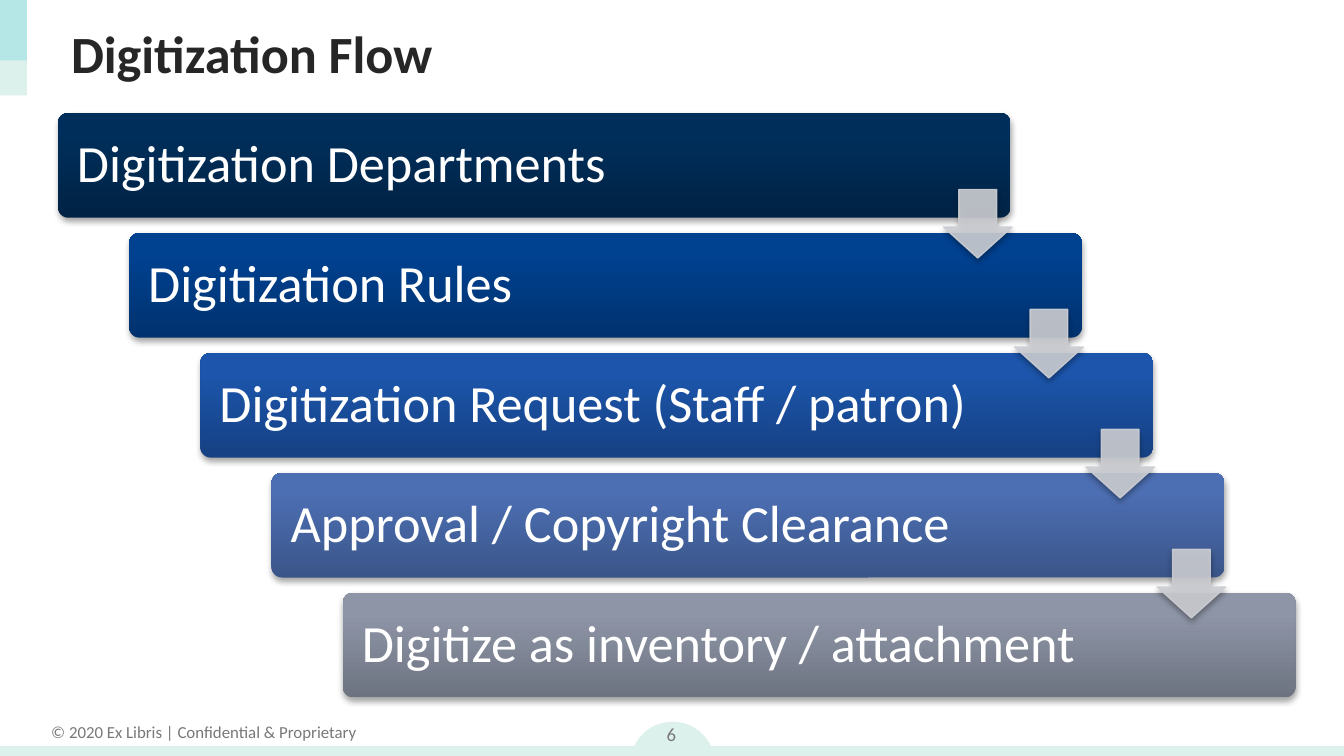
"""Build the Digitization Flow slide: five cascading steps joined by arrows."""
from lxml import etree
from pptx import Presentation
from pptx.dml.color import RGBColor
from pptx.enum.shapes import MSO_SHAPE
from pptx.enum.text import MSO_ANCHOR, PP_ALIGN
from pptx.oxml.ns import qn
from pptx.util import Inches, Pt

RECT, ROUNDED = MSO_SHAPE.RECTANGLE, MSO_SHAPE.ROUNDED_RECTANGLE
OVAL, DOWN_ARROW = MSO_SHAPE.OVAL, MSO_SHAPE.DOWN_ARROW
TOP, MIDDLE = MSO_ANCHOR.TOP, MSO_ANCHOR.MIDDLE
LEFT, CENTER = PP_ALIGN.LEFT, PP_ALIGN.CENTER

COLORS = {
    "mint": "DCF1EC", "aqua": "50CFDA", "footer": "787878", "title": "262626",
    "white": "FFFFFF", "arrow": "CCCED3", "shadow": "000000",
}
FONT = "Calibri"
TITLE = "Digitization Flow"
COPYRIGHT = "© 2020 Ex Libris | Confidential & Proprietary"
PAGE_NUMBER = "6"
STEPS = [
    ("Digitization Departments", "002345", "002E5A"),
    ("Digitization Rules", "00326F", "004190"),
    ("Digitization Request (Staff / patron)", "164183", "1C55AB"),
    ("Approval / Copyright Clearance", "3A5589", "4C6EB2"),
    ("Digitize as inventory / attachment", "6D7380", "8E95A6"),
]
DECORATIONS = [
    (OVAL, (4.69, 5.37, 0.63, 0.63), "mint", 100),
    (RECT, (0, 5.55, 10, 0.11), "mint", 100),
    (RECT, (0, 0, 0.2, 0.71), "mint", 100),
    (RECT, (0, 0, 0.2, 0.45), "aqua", 27),
]
SLIDE_WIDTH = 10
SLIDE_HEIGHT = SLIDE_WIDTH * 9 / 16
STEP_LEFT, STEP_TOP, STEP_WIDTH, STEP_HEIGHT = 0.43, 0.84, 7.09, 0.78
LAST_STEP_TOP = 4.41
SHIFT_X = 0.53
SHIFT_Y = (LAST_STEP_TOP - STEP_TOP) / (len(STEPS) - 1)
ARROW_LEFT, ARROW_TOP, ARROW_SIZE = 7.02, 1.41, 0.51


def add_alpha(color, percent):
    etree.SubElement(color, qn("a:alpha"), val=str(percent * 1000))


def add_figure(slide, kind, box):
    figure = slide.shapes.add_shape(kind, *map(Inches, box))
    figure.shadow.inherit = False
    figure.line.fill.background()
    return figure


def fill_solid(fill, color, percent, parent):
    fill.solid()
    fill.fore_color.rgb = RGBColor.from_string(COLORS[color])
    if percent < 100:
        add_alpha(parent.find(qn("a:solidFill")).find(qn("a:srgbClr")), percent)


def add_shadow(figure):
    effects = figure.element.spPr.find(qn("a:effectLst"))
    shadow = etree.SubElement(
        effects, qn("a:outerShdw"), blurRad=str(Pt(3.1)), dist=str(Pt(1.8)),
        dir="5400000", rotWithShape="0")
    color = etree.SubElement(shadow, qn("a:srgbClr"), val=COLORS["shadow"])
    add_alpha(color, 35)


def write(frame, text, size, color, align=LEFT, anchor=MIDDLE, bold=False, wrap=True):
    frame.word_wrap = wrap
    frame.vertical_anchor = anchor
    paragraph = frame.paragraphs[0]
    paragraph.alignment = align
    run = paragraph.add_run()
    run.text = text
    run.font.name, run.font.size, run.font.bold = FONT, Pt(size), bold
    run.font.color.rgb = RGBColor.from_string(COLORS[color])
    return paragraph


def add_label(slide, box, *args, **options):
    write(slide.shapes.add_textbox(*map(Inches, box)).text_frame, *args, **options)


def add_step(slide, index, text, dark, light):
    box = (STEP_LEFT + index * SHIFT_X, STEP_TOP + index * SHIFT_Y,
           STEP_WIDTH, STEP_HEIGHT)
    step = add_figure(slide, ROUNDED, box)
    step.adjustments[0] = 0.1
    step.fill.gradient()
    step.fill.gradient_angle = 90
    stops = zip(step.fill.gradient_stops, (0, 0.8), (dark, light))
    for stop, position, color in stops:
        stop.position = position
        stop.color.rgb = RGBColor.from_string(color)
    add_shadow(step)
    frame = step.text_frame
    frame.margin_left = frame.margin_right = Inches(0.12)
    frame.margin_top = frame.margin_bottom = Inches(0.12)
    write(frame, text, 28, "white").line_spacing = 0.9


def add_arrow(slide, index):
    box = (ARROW_LEFT + index * SHIFT_X, ARROW_TOP + index * SHIFT_Y,
           ARROW_SIZE, ARROW_SIZE)
    arrow = add_figure(slide, DOWN_ARROW, box)
    arrow.adjustments[0], arrow.adjustments[1] = 0.55, 0.45
    properties = arrow.element.spPr
    fill_solid(arrow.fill, "arrow", 90, properties)
    arrow.line.width = Pt(0.75)
    fill_solid(arrow.line.fill, "arrow", 90, properties.find(qn("a:ln")))
    add_shadow(arrow)


def main():
    deck = Presentation()
    deck.slide_width, deck.slide_height = Inches(SLIDE_WIDTH), Inches(SLIDE_HEIGHT)
    slide = deck.slides.add_slide(deck.slide_layouts[6])
    for kind, box, color, percent in DECORATIONS:
        figure = add_figure(slide, kind, box)
        fill_solid(figure.fill, color, percent, figure.element.spPr)
    add_label(slide, (0.27, 5.32, 2.49, 0.25), COPYRIGHT, 9, "footer",
              align=CENTER, anchor=TOP, wrap=False)
    add_label(slide, (4.7, 5.26, 0.59, 0.4), PAGE_NUMBER, 10, "footer", align=CENTER)
    add_label(slide, (0.43, 0.08, 9.21, 0.63), TITLE, 28, "title", bold=True)
    for index, step in enumerate(STEPS):
        add_step(slide, index, *step)
    for index in range(len(STEPS) - 1):
        add_arrow(slide, index)
    deck.save("out.pptx")


if __name__ == "__main__":
    main()
